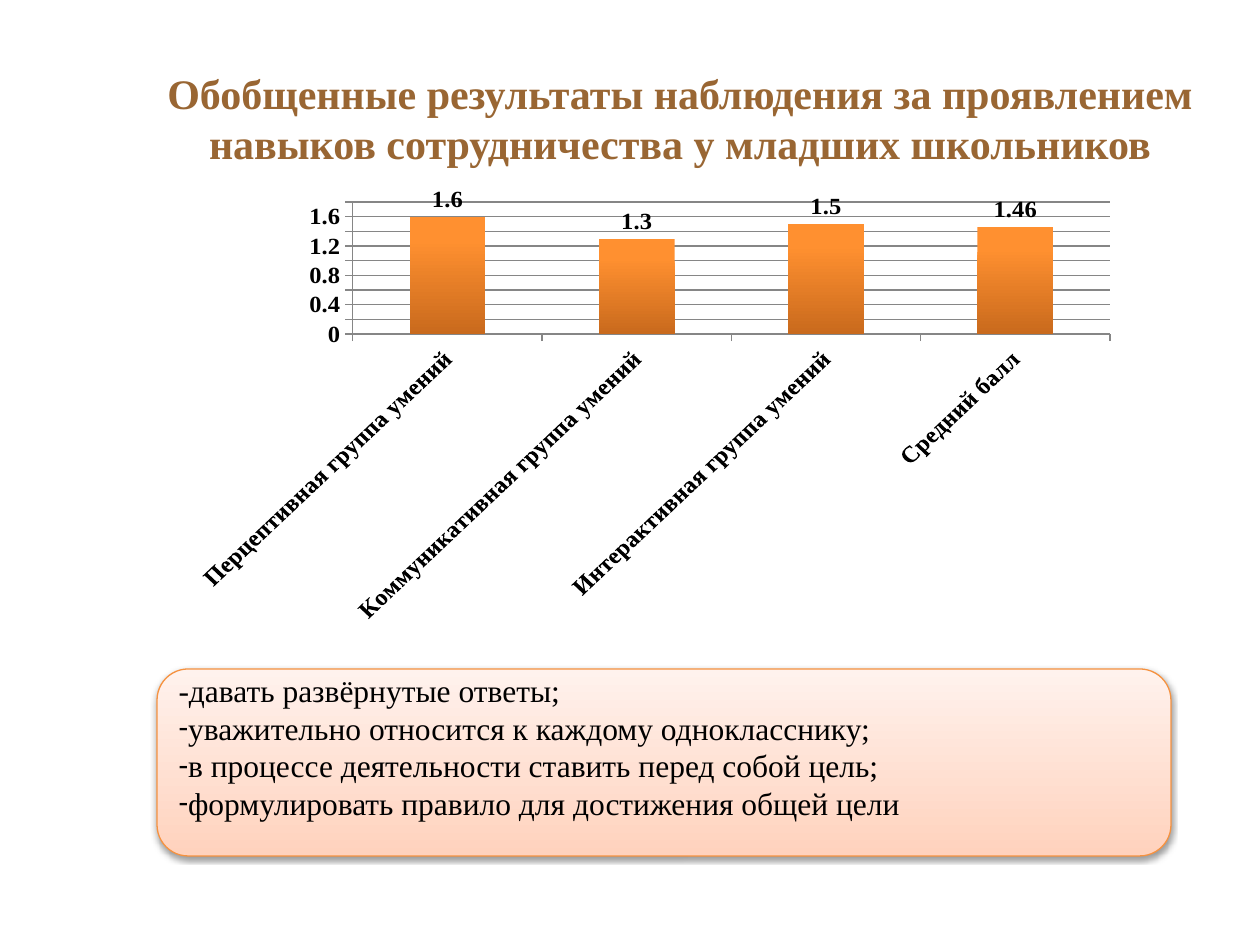
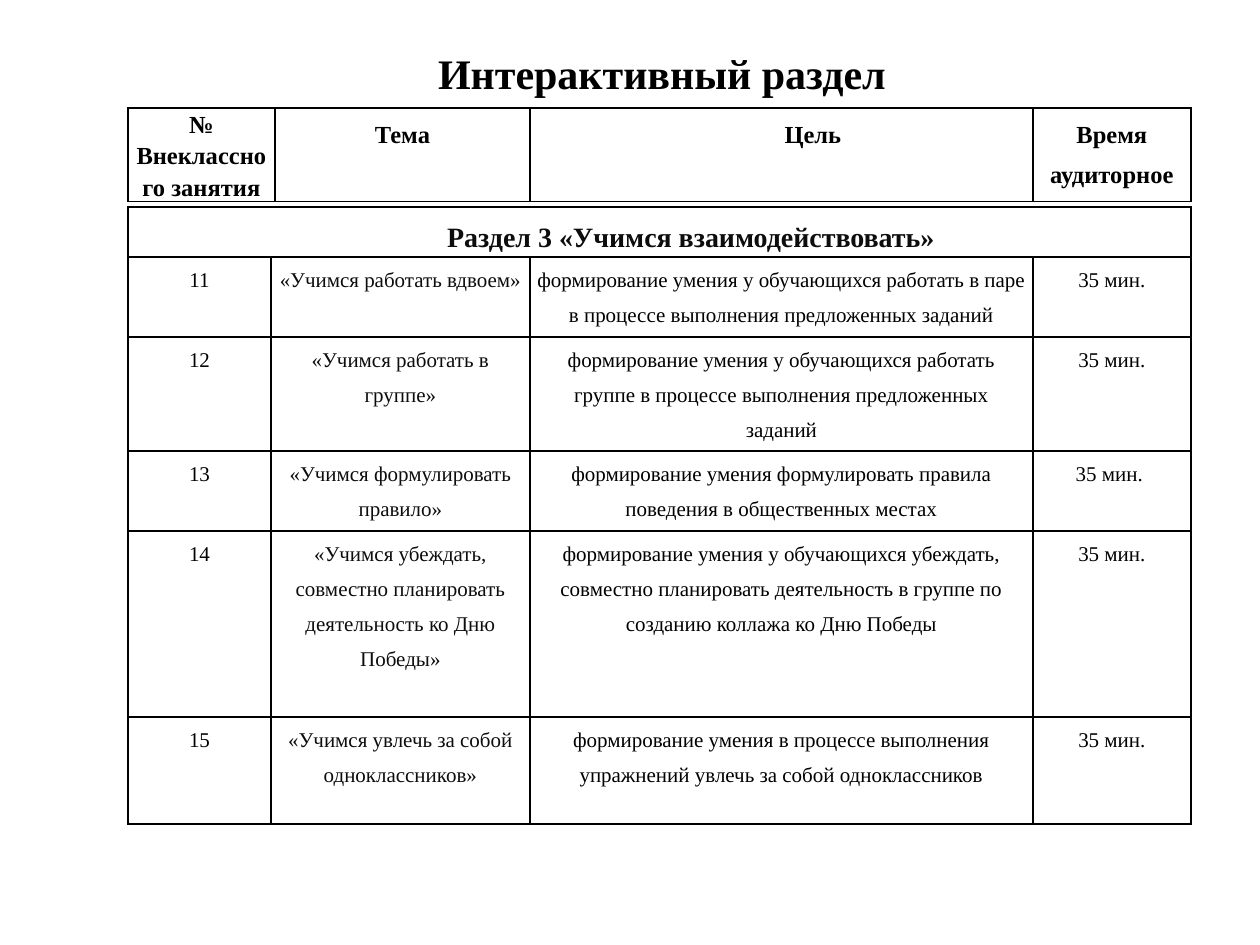
from lxml import etree
from pptx import Presentation
from pptx import util as u
from pptx.chart.data import CategoryChartData
from pptx.dml.color import RGBColor
from pptx.enum import chart as ch, shapes, text
from pptx.oxml.ns import qn

FONT = "Times New Roman"
BLACK, NEAR_BLACK, BROWN, GRID = "000000", "0D0D0D", "996633", "868686"
BAR_TOP, BAR_BOTTOM = "FF9030", "C96A1D"
PANEL_BOTTOM, PANEL_TOP, PANEL_LINE = "FFD2BD", "FFF2ED", "F69240"

SKILLS = {
    "Перцептивная группа умений": 1.6,
    "Коммуникативная группа умений": 1.3,
    "Интерактивная группа умений": 1.5,
    "Средний балл": 1.46,
}
GOALS = [
    "-давать развёрнутые ответы;",
    "уважительно относится к каждому однокласснику;",
    "в процессе деятельности ставить перед собой цель;",
    "формулировать правило для достижения общей цели",
]
HEADINGS = ["№ Внеклассного занятия", "Тема", "Цель", "Время аудиторное"]
SECTION = "Раздел 3 «Учимся взаимодействовать»"
LESSONS = [
    ("11", "«Учимся работать вдвоем»",
     "формирование умения у обучающихся работать в паре в процессе выполнения "
     "предложенных заданий", "35 мин."),
    ("12", "«Учимся работать в группе»",
     "формирование умения у обучающихся работать группе в процессе выполнения "
     "предложенных заданий", "35 мин."),
    ("13", "«Учимся формулировать правило»",
     "формирование умения формулировать правила поведения в общественных местах",
     "35 мин. "),
    ("14", "«Учимся убеждать, совместно планировать деятельность ко Дню Победы»",
     "формирование умения у обучающихся убеждать, совместно планировать "
     "деятельность в группе по созданию коллажа ко Дню Победы", "35 мин."),
    ("15", "«Учимся увлечь за собой одноклассников»",
     "формирование умения в процессе выполнения упражнений увлечь за собой "
     "одноклассников", "35 мин."),
]


def px(n):
    return u.Emu(round(n * 914400 / 126))


def color(hex_code):
    return RGBColor.from_string(hex_code)


def style(font, size, hex_code=BLACK, bold=False):
    font.name, font.size, font.bold = FONT, u.Pt(size), bold
    font.color.rgb = color(hex_code)


def add_run(paragraph, words, *look):
    run = paragraph.add_run()
    run.text = words
    style(run.font, *look)


def gradient(fill, start, end, angle):
    fill.gradient()
    fill.gradient_angle = angle
    for stop, hex_code, position in zip(fill.gradient_stops, (start, end), (0, 1)):
        stop.color.rgb = color(hex_code)
        stop.position = position


def titled_slide(prs, words, box, hex_code, wrap):
    slide = prs.slides.add_slide(prs.slide_layouts[5])
    title = slide.shapes.title
    title.left, title.top, title.width, title.height = map(px, box)
    frame = title.text_frame
    frame.auto_size = text.MSO_AUTO_SIZE.NONE
    frame.word_wrap = wrap
    frame.vertical_anchor = text.MSO_ANCHOR.MIDDLE
    heading = frame.paragraphs[0]
    heading.alignment = text.PP_ALIGN.CENTER
    add_run(heading, words, 24, hex_code, True)
    return slide


def skills_chart(slide, box):
    data = CategoryChartData()
    data.categories = list(SKILLS)
    data.add_series("Series 1", list(SKILLS.values()))
    chart = slide.shapes.add_chart(
        ch.XL_CHART_TYPE.COLUMN_CLUSTERED, *map(px, box), data).chart
    chart.has_legend = chart.has_title = False
    style(chart.font, 14, BLACK, True)

    # Axes
    for axis in (chart.category_axis, chart.value_axis):
        style(axis.tick_labels.font, 14, BLACK, True)
        axis.major_tick_mark = ch.XL_TICK_MARK.OUTSIDE
        axis.format.line.color.rgb = color(GRID)
    slanted = chart.category_axis._element.find(qn("c:txPr")).find(qn("a:bodyPr"))
    slanted.set("rot", "-2700000")
    slanted.set("vert", "horz")
    scores = chart.value_axis
    scores.minimum_scale, scores.maximum_scale, scores.major_unit = 0, 1.8, 0.2
    scores.major_gridlines.format.line.color.rgb = color(GRID)

    # Bars and their values
    plot = chart.plots[0]
    plot.gap_width = 150
    plot.vary_by_categories = False
    bars = plot.series[0]
    gradient(bars.format.fill, BAR_TOP, BAR_BOTTOM, 270)
    bars.format.fill.gradient_stops[0].position = 0.2
    values = bars.data_labels
    values.show_value = True
    values.position = ch.XL_LABEL_POSITION.OUTSIDE_END
    style(values.font, 14, BLACK, True)


def add_shadow(shape):
    shape.shadow.inherit = False
    effects = shape._element.spPr.find(qn("a:effectLst"))
    shadow = etree.SubElement(effects, qn("a:outerShdw"), blurRad="40000",
                              dist="20000", dir="5400000", rotWithShape="0")
    tint = etree.SubElement(shadow, qn("a:srgbClr"), val=BLACK)
    etree.SubElement(tint, qn("a:alpha"), val="38000")


def goals_panel(slide, box):
    panel = slide.shapes.add_shape(
        shapes.MSO_SHAPE.ROUNDED_RECTANGLE, *map(px, box))
    gradient(panel.fill, PANEL_BOTTOM, PANEL_TOP, 90)
    panel.line.color.rgb = color(PANEL_LINE)
    panel.line.width = u.Pt(0.75)
    add_shadow(panel)
    frame = panel.text_frame
    frame.word_wrap = True
    frame.vertical_anchor = text.MSO_ANCHOR.MIDDLE
    frame.margin_top, frame.margin_bottom = 0, px(32)
    for i, goal in enumerate(GOALS):
        line = frame.add_paragraph() if i else frame.paragraphs[0]
        line.alignment = text.PP_ALIGN.LEFT
        if i:
            props = line._p.get_or_add_pPr()
            etree.SubElement(props, qn("a:buFont"), typeface="Calibri")
            etree.SubElement(props, qn("a:buChar"), char="-")
        add_run(line, goal, 18)


def add_grid(slide, left, top, columns, rows):
    table = slide.shapes.add_table(
        len(rows), len(columns), px(left), px(top),
        px(sum(columns)), px(sum(rows))).table
    table.first_row = table.horz_banding = False
    for column, width in zip(table.columns, columns):
        column.width = px(width)
    for row, height in zip(table.rows, rows):
        row.height = px(height)
    for cell in table.iter_cells():
        props = cell._tc.get_or_add_tcPr()
        for side in ("lnL", "lnR", "lnT", "lnB"):
            border = etree.SubElement(props, qn("a:" + side), w="12700")
            solid = etree.SubElement(border, qn("a:solidFill"))
            etree.SubElement(solid, qn("a:srgbClr"), val=BLACK)
        cell.fill.background()
    return table


def fill_cell(cell, words, look, side_margin, spacing=1.5, indent=0):
    cell.margin_left = cell.margin_right = px(side_margin)
    cell.margin_top = cell.margin_bottom = 0
    line = cell.text_frame.paragraphs[0]
    line.alignment = text.PP_ALIGN.CENTER
    line.line_spacing = spacing
    if indent:
        props = line._p.get_or_add_pPr()
        props.set("marL", str(px(indent)))
        props.set("indent", "0")
    add_run(line, words, *look)


def heading_table(slide, left, top):
    table = add_grid(slide, left, top, (147, 255, 503, 158), (77,))
    for i, words in enumerate(HEADINGS):
        fill_cell(table.cell(0, i), words, (14, BLACK, True), 5,
                  spacing=1.5 if i else 1.15, indent=63 if words == "Цель" else 0)


def lesson_table(slide, left, top):
    table = add_grid(slide, left, top, (143, 259, 503, 158),
                     (50, 80, 114, 80, 186, 107))
    section = table.cell(0, 0)
    section.merge(table.cell(0, 3))
    fill_cell(section, SECTION, (16, NEAR_BLACK, True), 6, indent=63)
    for r, lesson in enumerate(LESSONS, 1):
        for c, words in enumerate(lesson):
            fill_cell(table.cell(r, c), words,
                      (12, NEAR_BLACK if c == 1 else BLACK), 6)


def main():
    prs = Presentation()
    prs.slide_width, prs.slide_height = px(1260), px(945)

    # Observation results
    results = titled_slide(
        prs, "Обобщенные результаты наблюдения за проявлением навыков "
        "сотрудничества у младших школьников", (129, 60, 1102, 115), BROWN, True)
    skills_chart(results, (178, 186, 951, 437))
    goals_panel(results, (157, 669, 1014, 187))

    # Lesson plan
    plan = titled_slide(prs, "Интерактивный раздел", (423, 41, 478, 63), BLACK, False)
    heading_table(plan, 128, 108)
    lesson_table(plan, 128, 207)

    prs.save("out.pptx")


if __name__ == "__main__":
    main()
